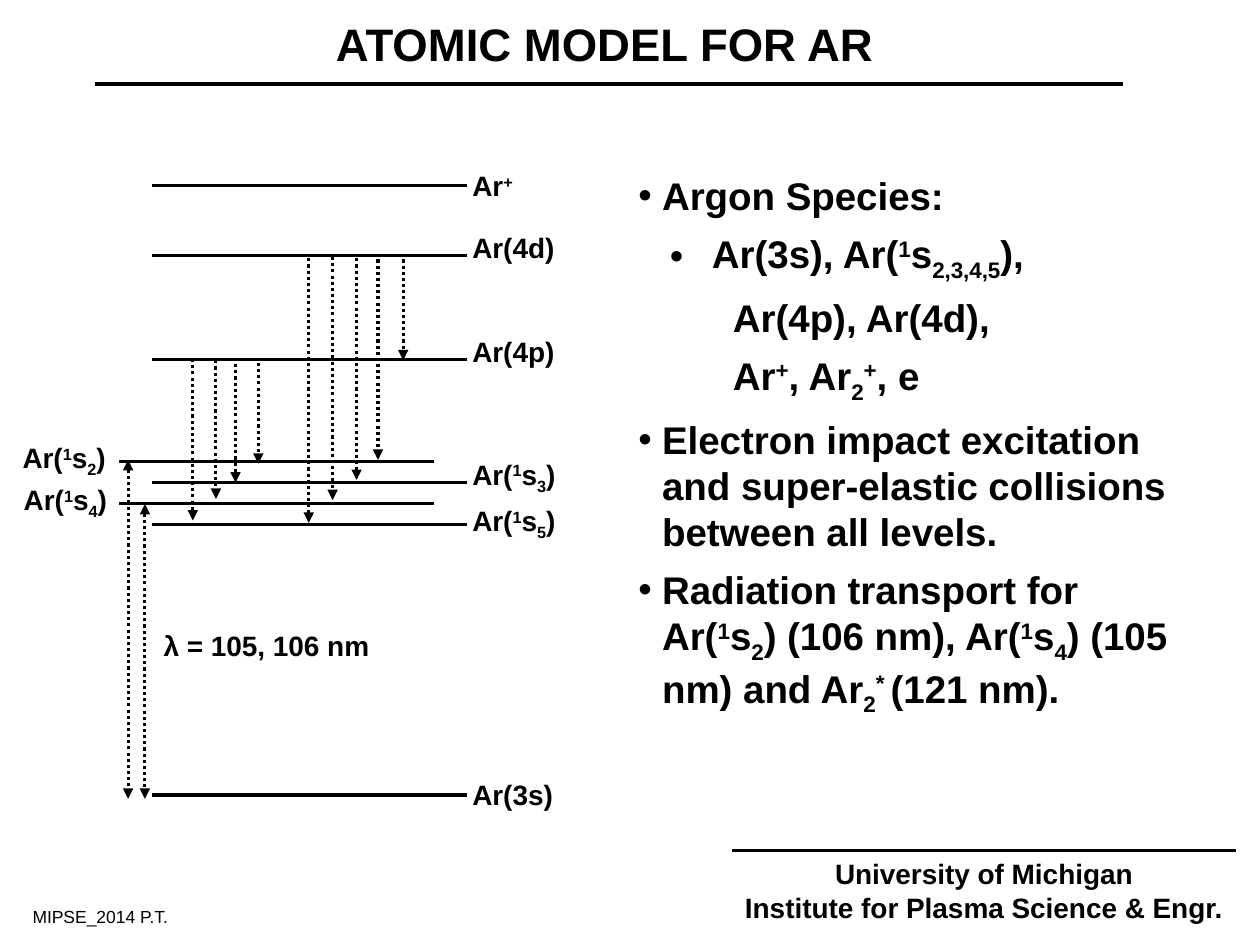
from dataclasses import dataclass

from lxml import etree
from pptx import Presentation
from pptx.dml.color import RGBColor
from pptx.enum.dml import MSO_LINE
from pptx.enum.shapes import MSO_CONNECTOR
from pptx.enum.text import PP_ALIGN
from pptx.oxml.ns import qn
from pptx.slide import Slide
from pptx.util import Pt

STRAIGHT = MSO_CONNECTOR.STRAIGHT
DOTTED = MSO_LINE.ROUND_DOT
LEFT = PP_ALIGN.LEFT
CENTER = PP_ALIGN.CENTER
BLACK = RGBColor(0, 0, 0)
WHITE = RGBColor(255, 255, 255)
FONT = "Arial"
BASELINES = {"^": "30000", "_": "-25000"}

LEVEL_WIDTH = 180
RIGHT_START, LEFT_START = 87, 67.8
RIGHT_LABEL = 262.8
S2_Y, S_STEP = 263.5, 12
S_LEVELS = [S2_Y + S_STEP * index for index in range(4)]


@dataclass(frozen=True)
class Level:
    text: str
    start: float
    y: float
    label_left: float
    label_top: float


@dataclass(frozen=True)
class Transition:
    x: float
    start: float
    end: float
    two_way: bool = False


@dataclass(frozen=True)
class Line:
    text: str
    margin: float = 13.5
    indent: float = 0
    bullet: bool = False
    space_after: float = 6.6


LEVELS = [
    Level("Ar|^+", RIGHT_START, 105.8, RIGHT_LABEL, 92.9),
    Level("Ar(4d)", RIGHT_START, 146.2, RIGHT_LABEL, 128.2),
    Level("Ar(4p)", RIGHT_START, 205.2, RIGHT_LABEL, 187.9),
    Level("Ar(|^1|s|_2|)", LEFT_START, S_LEVELS[0], 5.8, 248.4),
    Level("Ar(|^1|s|_3|)", RIGHT_START, S_LEVELS[1], RIGHT_LABEL, 257.8),
    Level("Ar(|^1|s|_4|)", LEFT_START, S_LEVELS[2], 6.5, 272.2),
    Level("Ar(|^1|s|_5|)", RIGHT_START, S_LEVELS[3], RIGHT_LABEL, 284.4),
    Level("Ar(3s)", RIGHT_START, 454.3, RIGHT_LABEL, 440.6),
]

TRANSITIONS = [
    Transition(73.2, 262.8, 456.5, True),
    Transition(82.8, 288, 456.5, True),
    Transition(110.2, 205.2, 297.4),
    Transition(123.4, 205.9, 285.1),
    Transition(134.6, 208.1, 275.8),
    Transition(147.6, 207.4, 265),
    Transition(176.4, 147.6, 298.8),
    Transition(190.1, 146.9, 285.8),
    Transition(203.8, 147.6, 274.3),
    Transition(216, 148.3, 262.8),
    Transition(230.4, 148.3, 205.9),
]

SPECIES_LINES = [
    Line("Argon Species:", indent=-13.5, bullet=True),
    Line("Ar(3s), Ar(|^1|s|_2,3,4,5|),", margin=42, indent=-24, bullet=True),
    Line("Ar(4p), Ar(4d),", margin=54),
    Line("Ar|^+|, Ar|_2|^+|, e", margin=54),
    Line("Electron impact excitation and super-elastic collisions between all levels.",
         indent=-13.5, bullet=True),
    Line("Radiation transport for Ar(|^1|s|_2|) (106 nm), Ar(|^1|s|_4|) (105 nm) "
         "and Ar|_2|^* |(121 nm).", indent=-13.5, bullet=True, space_after=0),
]


def add_text(slide: Slide, lines: list[Line], left: float, top: float,
             width: float, height: float, *, size: float = 16,
             bold: bool = True, align: PP_ALIGN = LEFT, wrap: bool = True) -> None:
    shape = slide.shapes.add_textbox(Pt(left), Pt(top), Pt(width), Pt(height))
    frame = shape.text_frame
    frame.word_wrap = wrap
    for index, line in enumerate(lines):
        paragraph = frame.add_paragraph() if index else frame.paragraphs[0]
        paragraph.alignment = align
        paragraph.space_after = Pt(line.space_after)
        properties = paragraph._p.get_or_add_pPr()
        properties.set("marL", str(Pt(line.margin)))
        properties.set("indent", str(Pt(line.indent)))
        if line.bullet:
            etree.SubElement(properties, qn("a:buFont")).set("typeface", FONT)
            etree.SubElement(properties, qn("a:buChar")).set("char", "•")
        for piece in line.text.split("|"):
            baseline = BASELINES.get(piece[0])
            run = paragraph.add_run()
            run.text = piece[1:] if baseline else piece
            run.font.name = FONT
            run.font.size = Pt(size)
            run.font.bold = bold
            run.font.color.rgb = BLACK
            if baseline:
                run.font._element.set("baseline", baseline)


def plain(text: str) -> Line:
    return Line(text, margin=0, space_after=0)


def add_line(slide: Slide, x1: float, y1: float, x2: float, y2: float, *,
             weight: float = 1.75, dotted: bool = False,
             arrows: tuple[str, ...] = ()) -> None:
    connector = slide.shapes.add_connector(STRAIGHT, Pt(x1), Pt(y1), Pt(x2), Pt(y2))
    connector.line.color.rgb = BLACK
    connector.line.width = Pt(weight)
    if dotted:
        connector.line.dash_style = DOTTED
    outline = connector.line._get_or_add_ln()
    for end in arrows:
        etree.SubElement(outline, qn(end)).set("type", "triangle")
    etree.SubElement(connector._element.spPr, qn("a:effectLst"))


def add_level(slide: Slide, level: Level) -> None:
    add_line(slide, level.start, level.y, level.start + LEVEL_WIDTH, level.y)
    add_text(slide, [plain(level.text)], level.label_left, level.label_top, 83, 26.6)


def add_transition(slide: Slide, transition: Transition) -> None:
    arrows = ("a:headEnd", "a:tailEnd") if transition.two_way else ("a:tailEnd",)
    add_line(slide, transition.x, transition.start, transition.x, transition.end,
             dotted=True, arrows=arrows)


def main() -> None:
    presentation = Presentation()
    presentation.slide_width = Pt(720)
    presentation.slide_height = Pt(540)
    slide = presentation.slides.add_slide(presentation.slide_layouts[6])
    slide.background.fill.solid()
    slide.background.fill.fore_color.rgb = WHITE

    add_text(slide, [plain("ATOMIC MODEL FOR AR")], 183.6, 5.8, 324, 38.9,
             size=26, align=CENTER, wrap=False)
    add_line(slide, 54, 48.2, 642, 48.2, weight=2.25)

    for level in LEVELS:
        add_level(slide, level)
    for transition in TRANSITIONS:
        add_transition(slide, transition)
    add_text(slide, [plain("λ = 105, 106 nm")], 86.4, 355.7, 144, 26.6)

    add_text(slide, SPECIES_LINES, 357.8, 95, 319, 321.8, size=22)

    add_line(slide, 418.3, 486, 706.3, 486, weight=2.25)
    add_text(slide, [plain("University of Michigan"),
                     plain("Institute for Plasma Science & Engr.")],
             414, 486, 296.6, 46, align=CENTER)
    add_text(slide, [plain("MIPSE_2014 P.T.")], 11.5, 514, 95, 19.4,
             size=10, bold=False, wrap=False)

    presentation.save("out.pptx")


if __name__ == "__main__":
    main()
